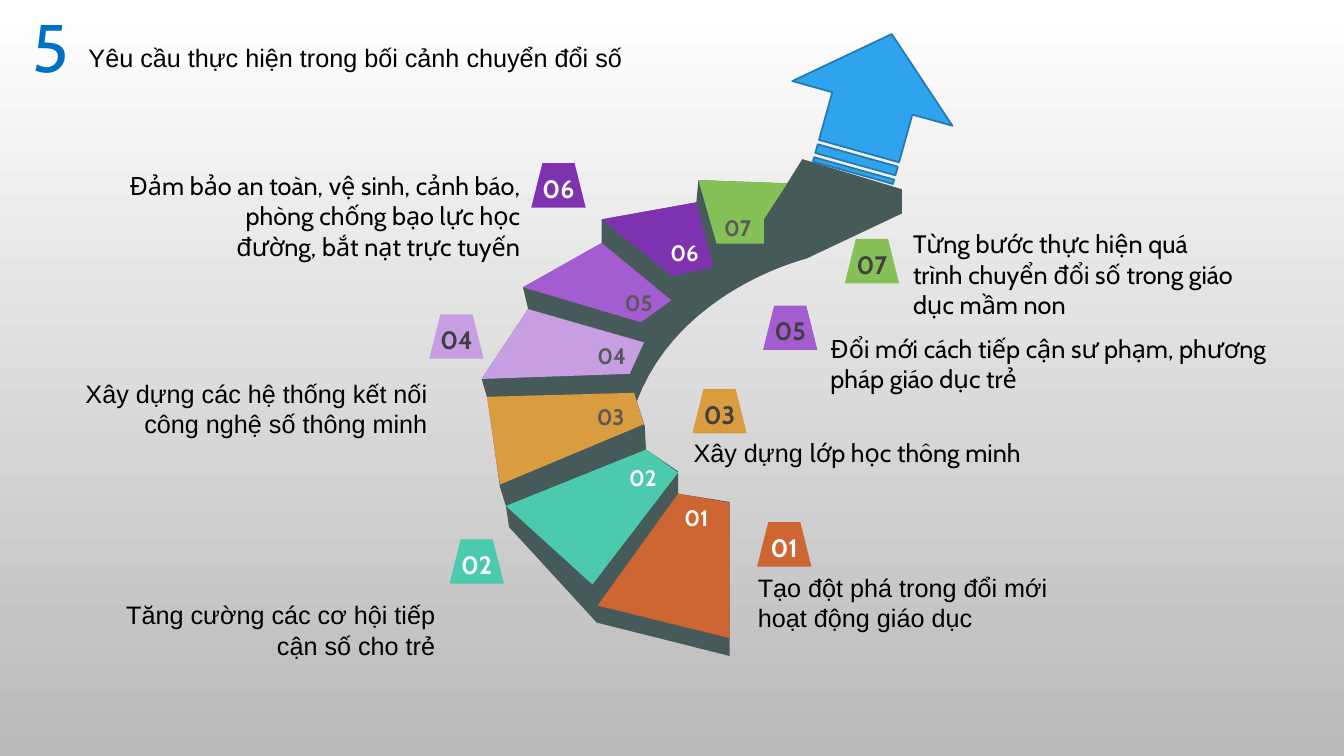
from dataclasses import dataclass

import pptx
import pptx.dml.color
import pptx.enum.shapes
import pptx.enum.text
import pptx.util

Cm = pptx.util.Cm
PRESET = pptx.enum.shapes.MSO_SHAPE
ALIGN = pptx.enum.text.PP_ALIGN
ANCHOR = pptx.enum.text.MSO_ANCHOR


@dataclass(frozen=True)
class Theme:
    heading_font: str = "Arial"
    accent_font: str = "Cabin"
    section_size: int = 48
    body_size: int = 18
    step_size: int = 16
    text: str = "000000"
    section: str = "0070C0"
    light: str = "FFFFFF"
    badge_dark: str = "404040"
    step_dark: str = "595959"
    background_end: str = "B9B9B9"
    road: str = "475A5A"
    arrow: str = "2FA3EE"
    arrow_line: str = "2379B0"


@dataclass(frozen=True)
class Step:
    """One requirement; face and number_at are in cm from the staircase corner."""
    number: str
    color: str
    light_text: bool
    face: tuple
    number_at: tuple
    badge_at: tuple
    label_box: tuple
    label: tuple
    align: ALIGN = ALIGN.LEFT


THEME = Theme()
ARIAL, CABIN = THEME.heading_font, THEME.accent_font
BADGE_SIZE = (1.37, 1.12)
STEP_NUMBER_SIZE = (1.2, 0.8)
STAIRCASE_BOX = (12.14, 4.01)

ROAD_OUTER = [(8.08, 0), (10.59, 0.76), (10.59, 1.37)]
ROAD_CURVE = [(8.18, 2.51), (8.18, 2.51), (4.98, 3.28), (3.91, 6.1)]
ROAD_STAIRS = [
    (4.11, 6.73), (4.14, 7.32), (4.95, 7.87), (4.95, 8.43), (6.25, 8.64),
    (6.25, 12.52), (2.9, 11.68), (0.69, 9.27), (0.61, 8.74), (0.46, 8.26),
    (0.15, 6.05), (0, 5.54), (1.17, 3.78), (1.04, 3.23), (3.02, 2.13),
    (3.02, 1.52), (5.41, 1.09), (5.46, 0.53), (7.7, 0.61),
]

STEPS = [
    Step("07", "86C157", False,
         ((5.92, 2.13), (5.46, 0.53), (7.7, 0.61), (7.11, 1.52), (7.11, 2.13)),
         (6.45, 1.73), (21.29, 6.02), (23.01, 5.64, 8.13, 3.07),
         (("Từng bước thực hiện quá trình chuyển đổi số trong giáo dục mầm non", CABIN),)),
    Step("06", "7E32B0", True,
         ((3.02, 1.52), (4.8, 2.95), (5.84, 2.72), (5.41, 1.09)),
         (5.11, 2.36), (13.39, 4.11), (2.01, 4.17, 11.1, 3.07),
         (("Đảm bảo an toàn, vệ sinh, cảnh báo, phòng chống bạo lực học\v"
           "đường, bắt nạt trực tuyến", CABIN),), ALIGN.RIGHT),
    Step("05", "A35DD1", False,
         ((1.04, 3.23), (4.01, 4.11), (4.78, 3.56), (3.02, 2.11)),
         (3.96, 3.61), (19.23, 7.7), (20.93, 8.28, 11.13, 2.31),
         (("Đổi mới cách tiếp cận sư phạm, phương pháp giáo dục trẻ", CABIN),)),
    Step("04", "C89EE3", False,
         ((0, 5.54), (3.73, 5.41), (4.09, 4.62), (1.17, 3.78)),
         (3.28, 4.95), (10.82, 7.92), (1.02, 9.4, 9.75, 3.07),
         (("Xây dựng các hệ thống kết nối công nghệ số thông minh", ARIAL),), ALIGN.RIGHT),
    Step("03", "D99C3F", False,
         ((0.46, 8.2), (4.09, 6.68), (3.84, 5.89), (0.13, 5.99)),
         (3.25, 6.48), (17.45, 9.8), (17.48, 10.9, 9.8, 1.55),
         (("Xây dựng ", ARIAL), ("lớp học thông minh", CABIN))),
    Step("02", "4BCAAD", True,
         ((0.61, 8.74), (4.14, 7.32), (4.95, 7.9), (2.79, 10.72)),
         (4.06, 8.03), (11.33, 13.59), (2.84, 14.99, 8.13, 1.83),
         (("Tăng cường các cơ hội tiếp cận số cho trẻ", ARIAL),), ALIGN.RIGHT),
    Step("01", "CE6633", True,
         ((2.92, 11.25), (4.95, 8.43), (6.25, 8.66), (6.25, 12.07)),
         (5.41, 9.02), (19.08, 13.16), (19.1, 14.3, 8.13, 2.31),
         (("Tạo đột phá trong đổi mới hoạt động giáo dục", ARIAL),)),
]


def rgb(color):
    return pptx.dml.color.RGBColor.from_string(color)


def lengths(values):
    return [Cm(value) for value in values]


def paint(shape, color):
    shape.shadow.inherit = False
    shape.fill.solid()
    shape.fill.fore_color.rgb = rgb(color)
    shape.line.fill.background()


def write(frame, parts, size, color, align=ALIGN.LEFT, bold=False, anchor=ANCHOR.TOP, inset=0):
    """Fill a text frame with one paragraph of (text, font) parts."""
    frame.word_wrap = True
    frame.auto_size = pptx.enum.text.MSO_AUTO_SIZE.NONE
    frame.vertical_anchor = anchor
    frame.margin_left = frame.margin_right = Cm(inset)
    paragraph = frame.paragraphs[0]
    paragraph.text = parts[0][0]
    for text, _ in parts[1:]:
        paragraph.add_run().text = text
    paragraph.alignment = align
    fonts = [parts[0][1]] * (len(paragraph.runs) - len(parts) + 1) + [f for _, f in parts[1:]]
    for run, font_name in zip(paragraph.runs, fonts):
        run.font.name = font_name
        run.font.size = pptx.util.Pt(size)
        run.font.bold = bold
        run.font.color.rgb = rgb(color)


def curve_points(start, pull_out, pull_in, end, count=24):
    """Points along a cubic Bézier curve."""
    for i in range(count + 1):
        t = i / count
        weights = ((1 - t) ** 3, 3 * t * (1 - t) ** 2, 3 * t * t * (1 - t), t ** 3)
        yield tuple(sum(w * p[axis] for w, p in zip(weights, (start, pull_out, pull_in, end)))
                    for axis in (0, 1))


def add_outline(slide, box, points, color):
    corners = [tuple(lengths(point)) for point in points]
    builder = slide.shapes.build_freeform(*corners[0])
    builder.add_line_segments(corners[1:])
    paint(builder.convert_to_shape(*lengths(box)), color)


def add_background(slide):
    fill = slide.background.fill
    fill.gradient()
    fill.gradient_angle = 270
    for stop, color in zip(fill.gradient_stops, (THEME.light, THEME.background_end)):
        stop.color.rgb = rgb(color)


def add_heading(slide, box):
    left, top, width, height = box
    section = slide.shapes.add_textbox(*lengths((left, top, 2.77, height)))
    write(section.text_frame, [("5", CABIN)], THEME.section_size, THEME.section, inset=0.25)
    title = slide.shapes.title
    title.left, title.top, title.width, title.height = lengths(
        (left + 1.4, top + 0.94, width - 1.4, 1.02))
    write(title.text_frame, [("Yêu cầu thực hiện trong bối cảnh chuyển đổi số", ARIAL)],
          THEME.body_size, THEME.text, inset=0.25)


def add_staircase(slide, box):
    road = ROAD_OUTER + list(curve_points(*ROAD_CURVE)) + ROAD_STAIRS
    add_outline(slide, box, road, THEME.road)
    width, height = STEP_NUMBER_SIZE
    for step in STEPS:
        add_outline(slide, box, step.face, step.color)
        x, y = step.number_at
        number = slide.shapes.add_textbox(*lengths(
            (box[0] + x - width / 2, box[1] + y - height / 2, width, height)))
        write(number.text_frame, [(step.number, CABIN)], THEME.step_size,
              THEME.light if step.light_text else THEME.step_dark,
              ALIGN.CENTER, True, ANCHOR.MIDDLE)


def add_requirement(slide, step):
    label = slide.shapes.add_textbox(*lengths(step.label_box))
    write(label.text_frame, step.label, THEME.body_size, THEME.text, step.align)
    badge = slide.shapes.add_shape(PRESET.TRAPEZOID, *lengths(step.badge_at + BADGE_SIZE))
    paint(badge, step.color)
    write(badge.text_frame, [(step.number, CABIN)], THEME.body_size,
          THEME.light if step.light_text else THEME.badge_dark,
          ALIGN.CENTER, True, ANCHOR.MIDDLE)


def add_arrow(slide, box):
    arrow = slide.shapes.add_shape(PRESET.STRIPED_RIGHT_ARROW, *lengths(box))
    paint(arrow, THEME.arrow)
    arrow.line.color.rgb = rgb(THEME.arrow_line)
    arrow.line.width = pptx.util.Pt(1.25)
    arrow.rotation = 285.6


def main():
    deck = pptx.Presentation()
    deck.slide_width, deck.slide_height = Cm(33.87), Cm(19.05)
    slide = deck.slides.add_slide(deck.slide_layouts.get_by_name("Title Only"))
    add_background(slide)
    add_staircase(slide, STAIRCASE_BOX)
    for step in STEPS:
        add_requirement(slide, step)
    add_heading(slide, (0.58, 0, 19.51, 2.31))
    add_arrow(slide, (20.17, 0.51, 3.63, 4.19))
    deck.save("out.pptx")


if __name__ == "__main__":
    main()
